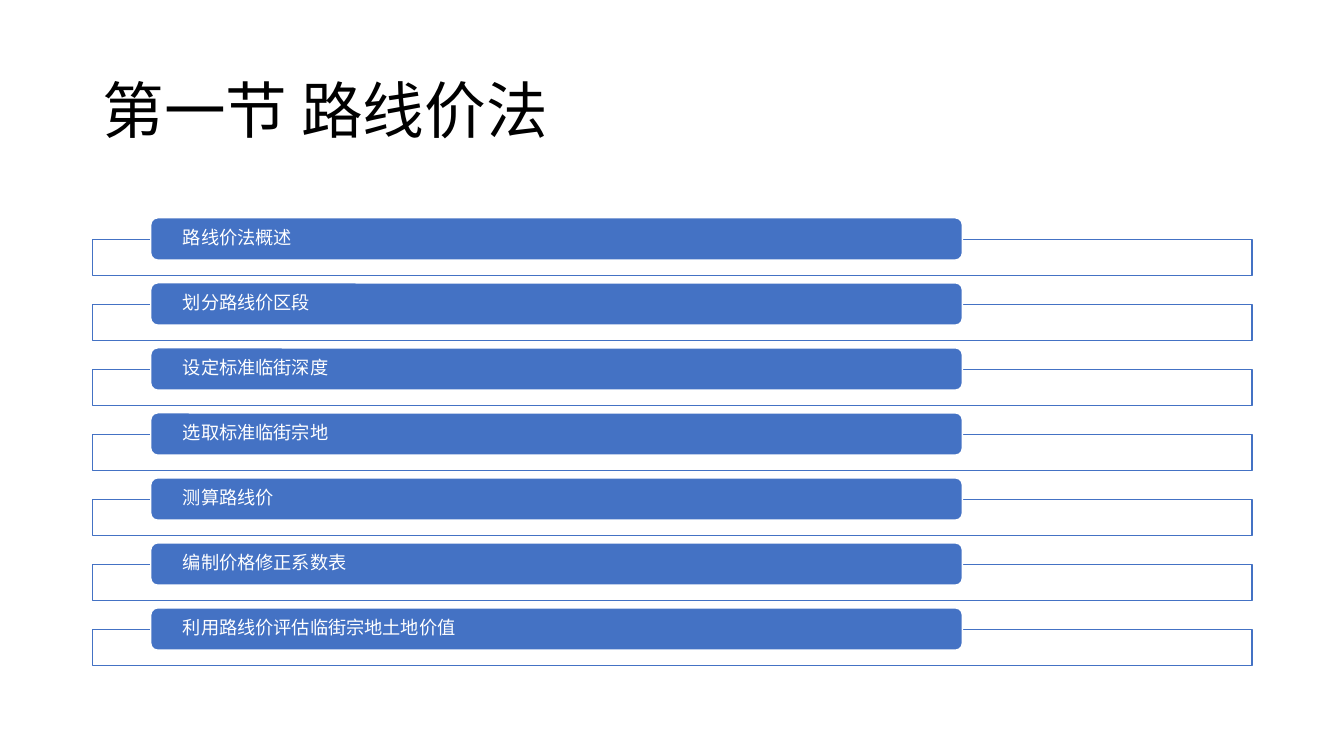
from dataclasses import dataclass

from lxml import etree
from pptx import Presentation
from pptx.dml.color import RGBColor
from pptx.enum.shapes import MSO_SHAPE
from pptx.enum.text import MSO_ANCHOR, PP_ALIGN
from pptx.oxml.ns import qn
from pptx.util import Inches, Pt

RECT = MSO_SHAPE.RECTANGLE
ROUNDED = MSO_SHAPE.ROUNDED_RECTANGLE
MIDDLE = MSO_ANCHOR.MIDDLE
LEFT = PP_ALIGN.LEFT

FONT = "Noto Sans CJK SC"
BLACK, WHITE, BLUE = "000000", "FFFFFF", "4472C4"
COL = Inches(11.5) / 100
ROW = Inches(6.03 - 2.16) / 6
FIRST_ROW = 3.35
FRAME_DROP = 0.33

TITLE = "第一节 路线价法"
TOPICS = [
    "路线价法概述",
    "划分路线价区段",
    "设定标准临街深度",
    "选取标准临街宗地",
    "测算路线价",
    "编制价格修正系数表",
    "利用路线价评估临街宗地土地价值",
]


@dataclass
class Box:
    col: float
    row: float
    cols: float
    rows: float

    def emu(self) -> tuple[int, int, int, int]:
        return (round(self.col * COL), round(self.row * ROW),
                round(self.cols * COL), round(self.rows * ROW))


def rgb(color: str) -> RGBColor:
    return RGBColor.from_string(color)


def write(s, text: str, size: float, color: str, inset: float) -> None:
    tf = s.text_frame
    tf.word_wrap = True
    tf.vertical_anchor = MIDDLE
    tf.margin_left = tf.margin_right = Inches(inset)
    p = tf.paragraphs[0]
    p.text = text
    p.alignment = LEFT
    p.line_spacing = 0.9
    p.font.size = Pt(size)
    p.font.color.rgb = rgb(color)
    p.font.name = FONT
    props = p._p.pPr.find(qn("a:defRPr"))
    etree.SubElement(props, qn("a:ea")).set("typeface", FONT)


def add_box(shapes, kind, box: Box, fill: str, line: str):
    s = shapes.add_shape(kind, *box.emu())
    s.shadow.inherit = False
    s.fill.solid()
    s.fill.fore_color.rgb = rgb(fill)
    s.line.color.rgb = rgb(line)
    s.line.width = Pt(1)
    return s


def set_opacity(s, percent: int) -> None:
    color = s._element.spPr.find(qn("a:solidFill"))[0]
    etree.SubElement(color, qn("a:alpha")).set("val", str(percent * 1000))


def add_topic(shapes, row: float, text: str) -> None:
    frame = add_box(shapes, RECT, Box(8, row + FRAME_DROP, 100, 0.56), WHITE, BLUE)
    set_opacity(frame, 90)
    bar = add_box(shapes, ROUNDED, Box(13, row, 70, 0.65), BLUE, WHITE)
    write(bar, text, 13, WHITE, 0.3)
    bar.text_frame.margin_top = bar.text_frame.margin_bottom = 0


def main() -> None:
    prs = Presentation()
    prs.slide_width, prs.slide_height = Inches(13.33), Inches(7.5)
    shapes = prs.slides.add_slide(prs.slide_layouts[6]).shapes
    title = shapes.add_textbox(*Box(8, 0.62, 100, 2.25).emu())
    write(title, TITLE, 44, BLACK, 0.1)
    for i, topic in enumerate(TOPICS):
        add_topic(shapes, FIRST_ROW + i, topic)
    prs.save("out.pptx")


if __name__ == "__main__":
    main()
